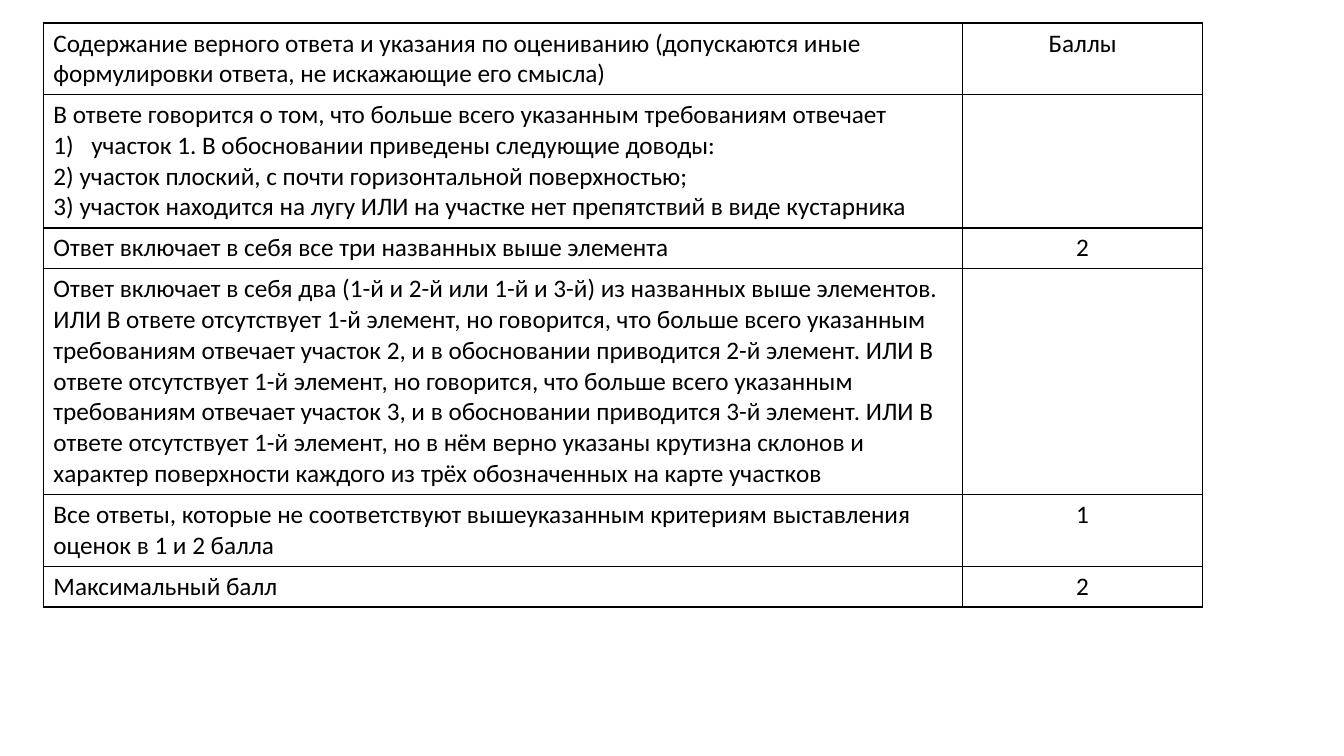
"""Build a slide with a scoring rubric table."""
from lxml import etree
from pptx import Presentation
from pptx import util as u
from pptx.dml.color import RGBColor
from pptx.enum import text
from pptx.oxml.ns import qn

COLORS = {"ink": "000000", "paper": "FFFFFF"}
FONT, SIZE = "Calibri", 18
NUMBERED = "участок 1. В обосновании приведены следующие доводы:"

RUBRIC = [
    (["Содержание верного ответа и указания по оцениванию (допускаются иные "
      "формулировки ответа, не искажающие его смысла)"], "Баллы", 2),
    (["В ответе говорится о том, что больше всего указанным требованиям отвечает",
      NUMBERED,
      "2) участок плоский, с почти горизонтальной поверхностью;",
      "3) участок находится на лугу ИЛИ на участке нет препятствий в виде кустарника"],
     "", 4),
    (["Ответ включает в себя все три названных выше элемента"], "2", 1),
    (["Ответ включает в себя два (1-й и 2-й или 1-й и 3-й) из названных выше элементов. "
      "ИЛИ В ответе отсутствует 1-й элемент, но говорится, что больше всего указанным "
      "требованиям отвечает участок 2, и в обосновании приводится 2-й элемент. ИЛИ В "
      "ответе отсутствует 1-й элемент, но говорится, что больше всего указанным "
      "требованиям отвечает участок 3, и в обосновании приводится 3-й элемент. ИЛИ В "
      "ответе отсутствует 1-й элемент, но в нём верно указаны крутизна склонов и "
      "характер поверхности каждого из трёх обозначенных на карте участков"], "", 7),
    (["Все ответы, которые не соответствуют вышеуказанным критериям выставления "
      "оценок в 1 и 2 балла"], "1", 2),
    (["Максимальный балл"], "2", 1),
]

LEFT, TOP = 31, 16.4
WIDTHS = [656.6, 171.4]
LINE_HEIGHT, CELL_PADDING = 22, 7.2
INDENT = 27


def number_paragraph(p):
    pPr = p._p.get_or_add_pPr()
    pPr.set("marL", str(u.Pt(INDENT)))
    pPr.set("indent", str(-u.Pt(INDENT)))
    etree.SubElement(pPr, qn("a:buAutoNum"), type="arabicParenR")


def add_borders(cell):
    tcPr = cell._tc.get_or_add_tcPr()
    for i, side in enumerate(("lnL", "lnR", "lnT", "lnB")):
        ln = etree.Element(qn(f"a:{side}"), w=str(u.Pt(1)))
        fill = etree.SubElement(ln, qn("a:solidFill"))
        etree.SubElement(fill, qn("a:srgbClr"), val=COLORS["ink"])
        tcPr.insert(i, ln)


def fill_cell(cell, lines, align):
    cell.fill.solid()
    cell.fill.fore_color.rgb = RGBColor.from_string(COLORS["paper"])
    add_borders(cell)
    tf = cell.text_frame
    for i, line in enumerate(lines):
        p = tf.add_paragraph() if i else tf.paragraphs[0]
        p.alignment = align
        if line == NUMBERED:
            number_paragraph(p)
        r = p.add_run()
        r.text = line
        r.font.name, r.font.size = FONT, u.Pt(SIZE)
        r.font.bold = False
        r.font.color.rgb = RGBColor.from_string(COLORS["ink"])


def main():
    prs = Presentation()
    prs.slide_width, prs.slide_height = u.Pt(960), u.Pt(540)
    s = prs.slides.add_slide(prs.slide_layouts[6])
    heights = [n * LINE_HEIGHT + CELL_PADDING for _, _, n in RUBRIC]
    table = s.shapes.add_table(len(RUBRIC), len(WIDTHS), u.Pt(LEFT), u.Pt(TOP),
                               u.Pt(sum(WIDTHS)), u.Pt(sum(heights))).table
    table.first_row = table.horz_banding = False
    for column, width in zip(table.columns, WIDTHS):
        column.width = u.Pt(width)
    for row, height, (criteria, score, _) in zip(table.rows, heights, RUBRIC):
        row.height = u.Pt(height)
        fill_cell(row.cells[0], criteria, text.PP_ALIGN.LEFT)
        fill_cell(row.cells[1], [score] if score else [], text.PP_ALIGN.CENTER)
    prs.save("out.pptx")


if __name__ == "__main__":
    main()
